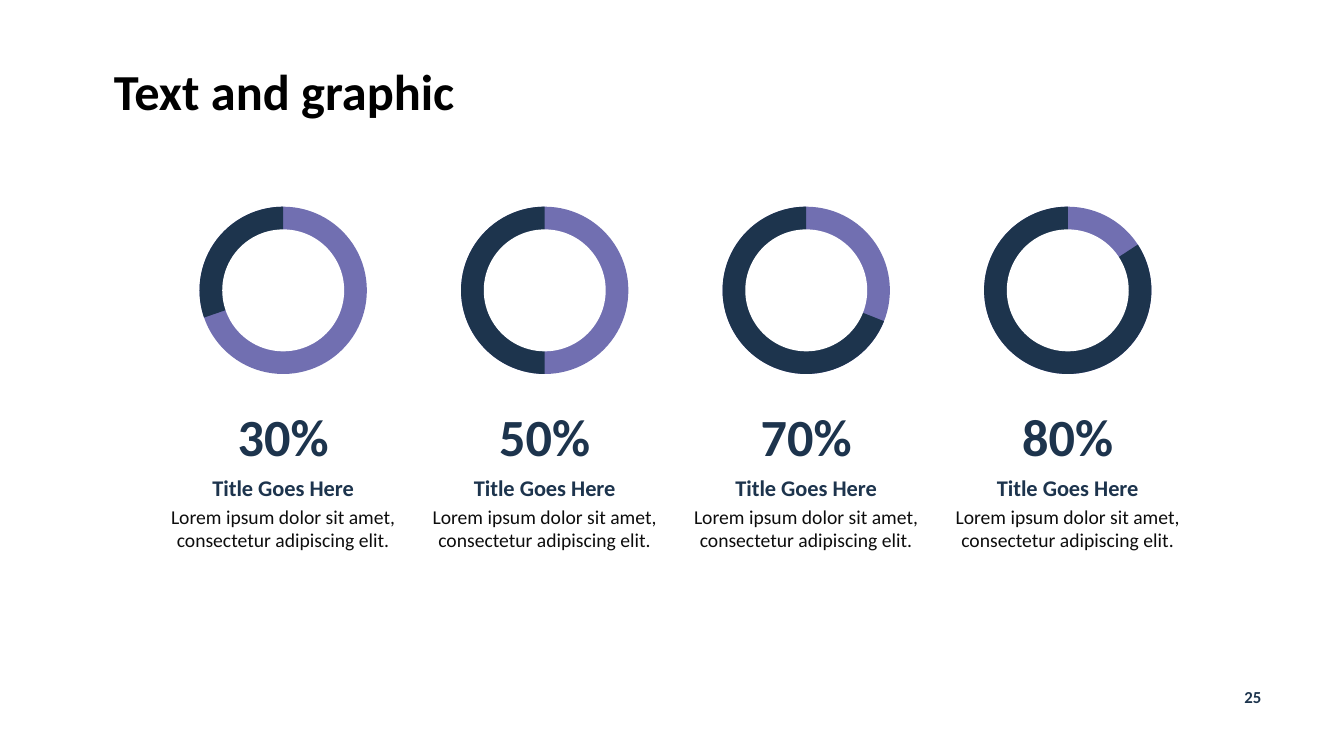
from pptx import Presentation
from pptx.dml.color import RGBColor
from pptx.enum.shapes import MSO_SHAPE
from pptx.enum.text import MSO_AUTO_SIZE, PP_ALIGN
from pptx.util import Pt

NAVY, VIOLET, WHITE, BLACK, INK = "1D344D", "716FB1", "FFFFFF", "000000", "0D0D0D"
RING, HOLE = 119.5, 87.1
MIDDLE = 207.4
FIRST, PITCH = 202.3, 186.8
BODY = "Lorem ipsum dolor sit amet, consectetur adipiscing elit."
# Label and the angle in degrees, clockwise from the right, where the navy part starts
RINGS = [("30%", 161), ("50%", 90.04), ("70%", 21.62), ("80%", 326.87)]


def paint(target, color):
    """Give a fill or a font a solid colour."""
    if hasattr(target, "solid"):
        target.solid()
        target.fore_color.rgb = RGBColor.from_string(color)
    else:
        target.color.rgb = RGBColor.from_string(color)


def add_text(slide, box, lines, inset=(7.2, 3.6), align=PP_ALIGN.CENTER):
    """Add a text box; each line is (text, size, colour, bold)."""
    frame = slide.shapes.add_textbox(*map(Pt, box)).text_frame
    frame.word_wrap = True
    frame.auto_size = MSO_AUTO_SIZE.SHAPE_TO_FIT_TEXT
    frame.margin_left = frame.margin_right = Pt(inset[0])
    frame.margin_top = frame.margin_bottom = Pt(inset[1])
    for i, (text, size, color, bold) in enumerate(lines):
        para = frame.add_paragraph() if i else frame.paragraphs[0]
        para.text = text
        para.alignment = align
        if i:
            para.space_before = Pt(2.7)
        font = para.font
        font.name, font.size, font.bold = "Calibri", Pt(size), bold
        paint(font, color)
    return frame


def add_disc(group, kind, center, size, color):
    left, top = center - size / 2, MIDDLE - size / 2
    disc = group.shapes.add_shape(kind, Pt(left), Pt(top), Pt(size), Pt(size))
    disc.shadow.inherit = False
    disc.line.fill.background()
    paint(disc.fill, color)
    return disc


def add_ring(slide, center, start):
    group = slide.shapes.add_group_shape()
    add_disc(group, MSO_SHAPE.OVAL, center, RING, VIOLET)
    pie = add_disc(group, MSO_SHAPE.PIE, center, RING, NAVY)
    # Angles count 60000 to the degree, adjustments 100000 to the unit
    pie.adjustments[0] = start * 0.6
    pie.adjustments[1] = 270 * 0.6
    add_disc(group, MSO_SHAPE.OVAL, center, HOLE, WHITE)


def add_column(slide, center, label, start):
    add_ring(slide, center, start)
    add_text(slide, (center - RING / 2, 283.7, RING, 54.7),
             [(label, 37.3, NAVY, True)], inset=(9.6, 4.8))
    add_text(slide, (center - 83, 338.4, 166, 56.2),
             [("Title Goes Here", 16, NAVY, True), (BODY, 14, INK, False)],
             inset=(0, 0))


def main():
    deck = Presentation()
    deck.slide_width, deck.slide_height = Pt(960), Pt(540)
    slide = deck.slides.add_slide(deck.slide_layouts[6])
    title = add_text(slide, (74.2, 44.6, 569.5, 46.8),
                     [("Text and graphic", 36, BLACK, True)], align=PP_ALIGN.LEFT)
    title.paragraphs[0].line_spacing = 0.9
    for i, (label, start) in enumerate(RINGS):
        add_column(slide, FIRST + i * PITCH, label, start)
    add_text(slide, (859, 486.7, 72, 21.8), [("25", 12, NAVY, True)])
    deck.save("out.pptx")


if __name__ == "__main__":
    main()
